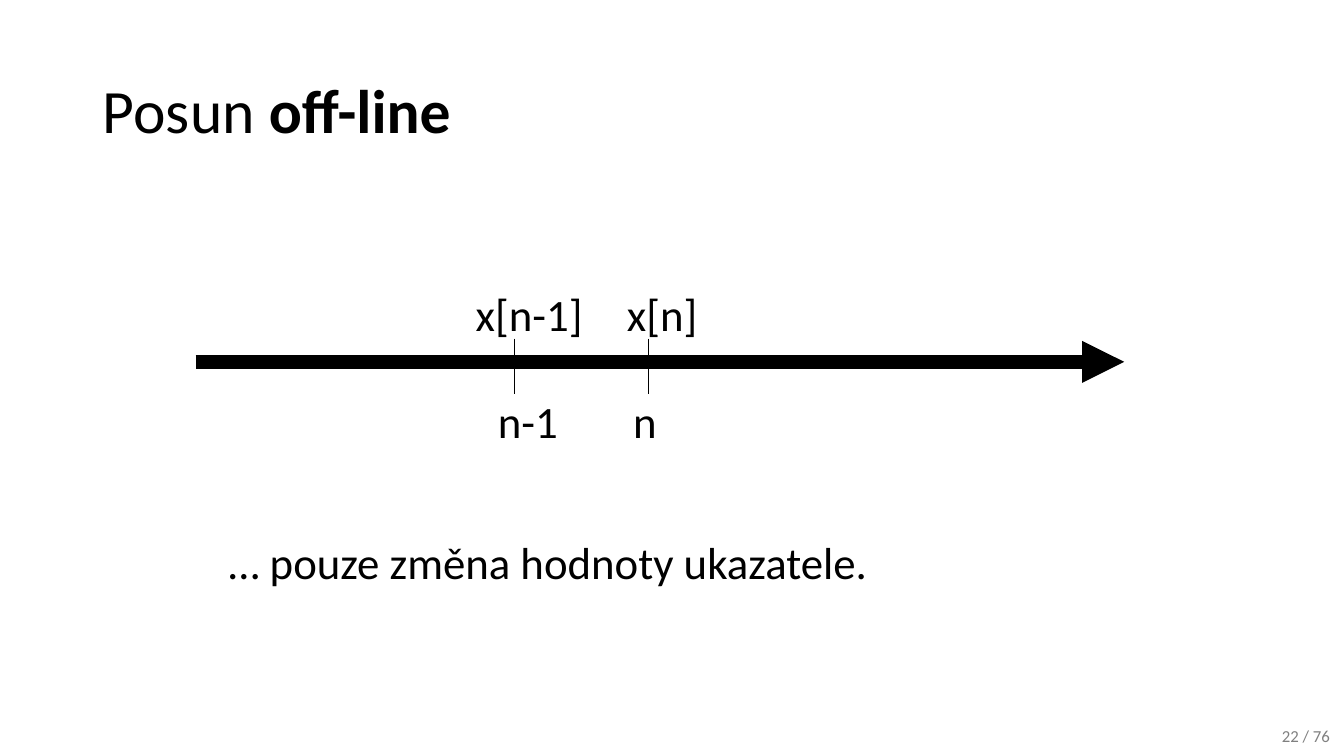
from dataclasses import dataclass

from lxml.etree import SubElement
from pptx import Presentation
from pptx.dml.color import RGBColor
from pptx.enum.shapes import MSO_CONNECTOR
from pptx.enum.text import MSO_ANCHOR, MSO_AUTO_SIZE, PP_ALIGN
from pptx.oxml.ns import qn
from pptx.shapes.connector import Connector
from pptx.slide import Slide
from pptx.text.text import _Paragraph as Paragraph
from pptx.util import Inches, Pt


@dataclass(frozen=True)
class Theme:
    font: str = "Calibri"
    ink: RGBColor = RGBColor(0, 0, 0)
    muted: RGBColor = RGBColor(0x80, 0x80, 0x80)
    title_size: int = 44
    text_size: int = 32
    page_size: int = 12
    axis_width: float = 10
    tick_width: float = 0.5


@dataclass(frozen=True)
class Label:
    text: str
    left: float
    top: float
    width: float
    height: float = 0.64


@dataclass(frozen=True)
class Sample:
    x: float
    value: Label
    index: Label


THEME = Theme()
AXIS_Y = 3.59
TICK_TOP, TICK_BOTTOM = 3.36, 3.91
VALUE_TOP, INDEX_TOP = 2.8, 3.86

SAMPLES = [
    Sample(5.1, Label("x[n-1]", 4.62, VALUE_TOP, 1.35), Label("n-1", 4.84, INDEX_TOP, 0.88)),
    Sample(6.43, Label("x[n]", 6.12, VALUE_TOP, 1.18), Label("n", 6.18, INDEX_TOP, 0.51)),
]
NOTE = Label("… pouze změna hodnoty ukazatele.", 2.17, 5.32, 9, 1.38)
PAGE = Label("22 / 76", 12.42, 7.15, 0.87, 0.33)


def style(p: Paragraph, size: int, color: RGBColor = THEME.ink) -> None:
    p.font.name = THEME.font
    p.font.size = Pt(size)
    p.font.color.rgb = color


def add_label(s: Slide, label: Label, size: int = THEME.text_size,
              color: RGBColor = THEME.ink) -> Paragraph:
    box = s.shapes.add_textbox(Inches(label.left), Inches(label.top),
                               Inches(label.width), Inches(label.height))
    tf = box.text_frame
    tf.word_wrap = True
    p = tf.paragraphs[0]
    p.text = label.text
    style(p, size, color)
    return p


def add_line(s: Slide, x1: float, y1: float, x2: float, y2: float, width: float) -> Connector:
    line = s.shapes.add_connector(MSO_CONNECTOR.STRAIGHT, Inches(x1), Inches(y1),
                                  Inches(x2), Inches(y2))
    line.line.color.rgb = THEME.ink
    line.line.width = Pt(width)
    SubElement(line._element.spPr, qn("a:effectLst"))
    return line


def add_title(s: Slide) -> None:
    title = s.shapes.title
    title.left, title.top = Inches(0.92), Inches(0.4)
    title.width, title.height = Inches(11.5), Inches(1.45)
    tf = title.text_frame
    tf.auto_size = MSO_AUTO_SIZE.NONE
    tf.vertical_anchor = MSO_ANCHOR.MIDDLE
    p = tf.paragraphs[0]
    p.alignment = PP_ALIGN.LEFT
    p.line_spacing = 0.9
    p.add_run().text = "Posun "
    r = p.add_run()
    r.text = "off-line"
    r.font.bold = True
    style(p, THEME.title_size)


def main() -> None:
    prs = Presentation()
    prs.slide_width, prs.slide_height = Inches(13.33), Inches(7.5)
    s = prs.slides.add_slide(prs.slide_layouts[5])
    add_title(s)

    # Time axis
    axis = add_line(s, 1.94, AXIS_Y, 11.15, AXIS_Y, THEME.axis_width)
    SubElement(axis.line._get_or_add_ln(), qn("a:tailEnd"), type="triangle")

    # Samples: tick, value above, index below
    for sample in SAMPLES:
        add_line(s, sample.x, TICK_TOP, sample.x, TICK_BOTTOM, THEME.tick_width)
        add_label(s, sample.value)
        add_label(s, sample.index)

    # Closing remark and page number
    add_label(s, NOTE).line_spacing = 0.9
    add_label(s, PAGE, THEME.page_size, THEME.muted).alignment = PP_ALIGN.RIGHT

    prs.save("out.pptx")


if __name__ == "__main__":
    main()
